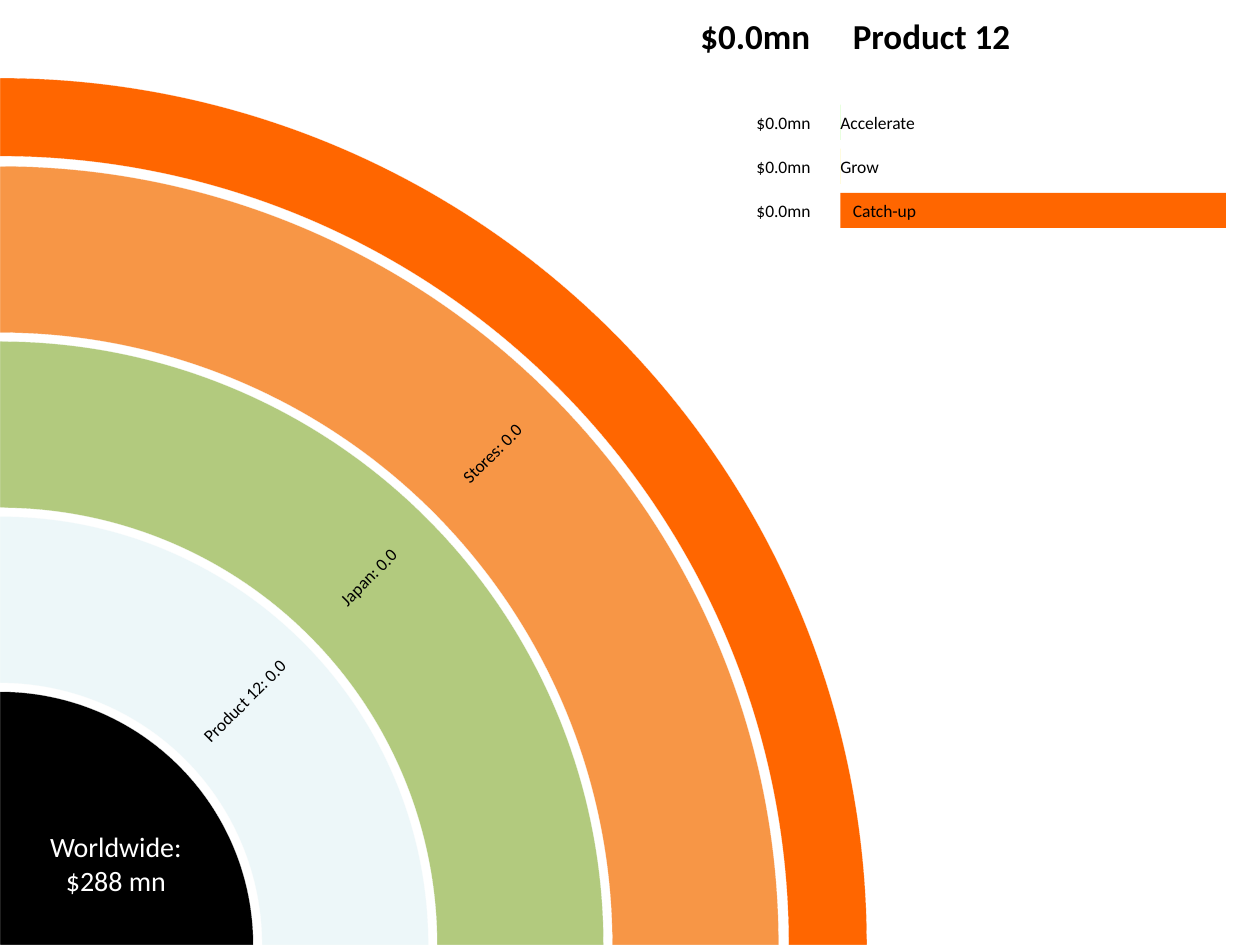
from math import cos, pi

from pptx import Presentation
from pptx.dml.color import RGBColor
from pptx.enum.shapes import MSO_SHAPE as Shape
from pptx.enum.text import MSO_ANCHOR as Anchor, PP_ALIGN as Align
from pptx.util import Inches, Pt

BLACK = RGBColor(0x00, 0x00, 0x00)
WHITE = RGBColor(0xFF, 0xFF, 0xFF)
GREEN = RGBColor(0x4C, 0xFF, 0x00)
YELLOW = RGBColor(0xFF, 0xE5, 0x00)
ORANGE = RGBColor(0xFF, 0x66, 0x00)
ICE = RGBColor(0xED, 0xF7, 0xF9)
SAGE = RGBColor(0xB2, 0xCA, 0x7E)
APRICOT = RGBColor(0xF7, 0x96, 0x46)

RINGS = [
    (2.01, 2.01, BLACK, None),
    (3.4, 1.32, ICE, "Product 12: 0.0"),
    (4.79, 1.32, SAGE, "Japan: 0.0"),
    (6.18, 1.32, APRICOT, "Stores: 0.0"),
    (6.88, 0.62, ORANGE, None),
]
BARS = [
    ("Accelerate", "$0.0mn", 0, GREEN),
    ("Grow", "$0.0mn", 0, YELLOW),
    ("Catch-up", "$0.0mn", 3.06, ORANGE),
]


def write(shape, text, size=10, color=BLACK, bold=False, align=Align.LEFT):
    frame = shape.text_frame
    frame.word_wrap = False
    frame.vertical_anchor = Anchor.MIDDLE
    for index, line in enumerate(text.split("\n")):
        para = frame.add_paragraph() if index else frame.paragraphs[0]
        para.alignment = align
        span = para.add_run()
        span.text = line
        span.font.name = "Calibri"
        span.font.size = Pt(size)
        span.font.bold = bold
        span.font.color.rgb = color


def add_text(page, left, top, width, height, text, **style):
    box = page.shapes.add_textbox(Inches(left), Inches(top), Inches(width), Inches(height))
    write(box, text, **style)
    return box


def add_filled(page, kind, left, top, width, height, fill):
    shape = page.shapes.add_shape(kind, Inches(left), Inches(top), Inches(width), Inches(height))
    shape.shadow.inherit = False
    shape.fill.solid()
    shape.fill.fore_color.rgb = fill
    shape.line.fill.background()
    return shape


def add_header(page, left, top, split, width, height):
    add_text(page, left + split, top, width - split, height, "Product 12", size=20, bold=True)
    add_text(page, left, top, 1.39, height, "$0.0mn", size=20, bold=True, align=Align.RIGHT)


def add_bars(page, left, top, split, height, pitch):
    for row, (name, amount, length, fill) in enumerate(BARS):
        y = top + row * pitch
        bar = add_filled(page, Shape.RECTANGLE, left + split, y, length, height, fill)
        write(bar, name)
        add_text(page, left, y, 1.39, height, amount, align=Align.RIGHT)


def add_rainbow(page, center_x, center_y):
    for radius, thickness, fill, label in RINGS:
        size = 2 * radius
        arc = add_filled(page, Shape.BLOCK_ARC, center_x - radius, center_y - radius, size, size, fill)
        for index, value in enumerate((162, 0, thickness / size)):
            arc.adjustments[index] = value
        arc.line.color.rgb = WHITE
        arc.line.width = Pt(0.05)
        if label:
            offset = (radius - thickness / 2) * cos(pi / 4)
            box = add_text(page, center_x + offset - 0.66, center_y - offset - 0.07,
                           1.32, 0.14, label, align=Align.CENTER)
            box.rotation = 315
    add_text(page, center_x, center_y - 0.92, 1.84, 0.54, "Worldwide:\n$288 mn",
             size=16, color=WHITE, align=Align.CENTER)


def main():
    deck = Presentation()
    deck.slide_width = Inches(10)
    deck.slide_height = Inches(7.5)
    page = deck.slides.add_slide(deck.slide_layouts[6])
    add_header(page, 5.14, 0, 1.53, 4.86, 0.56)
    add_bars(page, 5.14, 0.83, 1.53, 0.28, 0.35)
    add_rainbow(page, 0, 7.5)
    deck.save("out.pptx")


if __name__ == "__main__":
    main()
